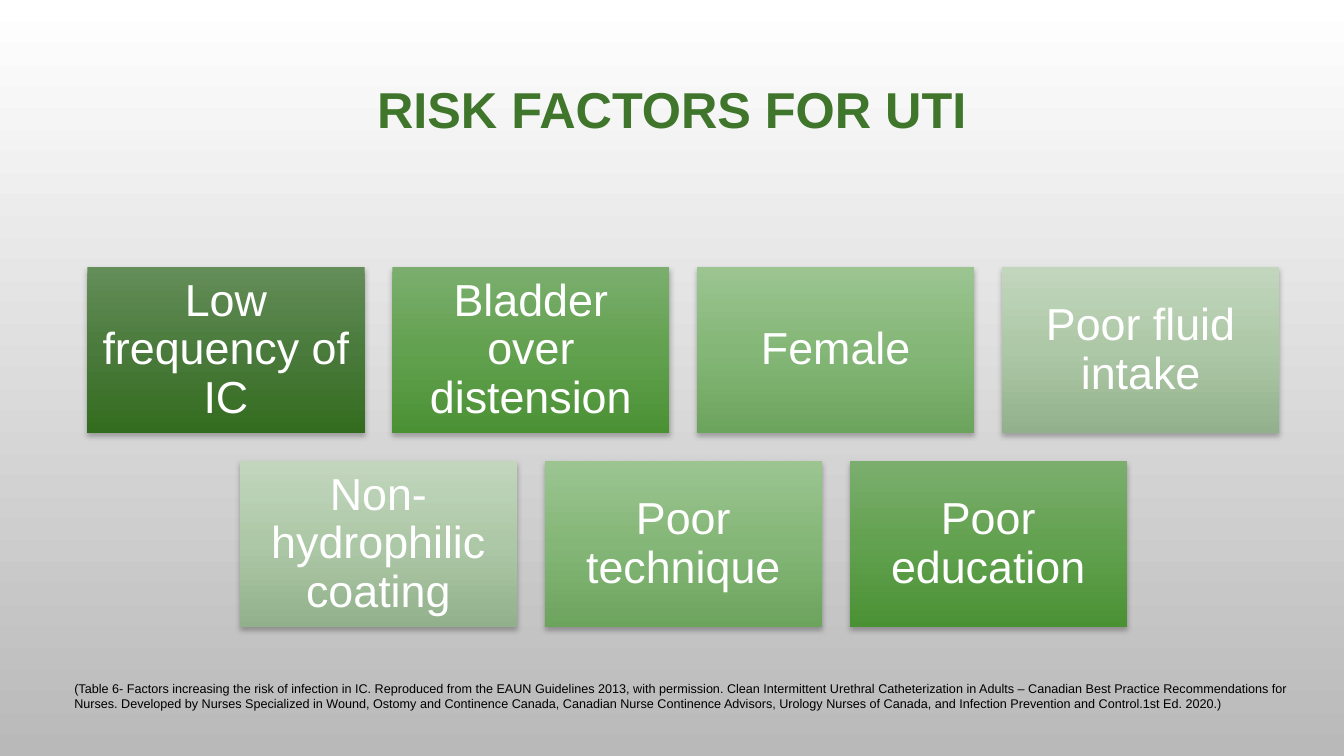
from lxml import etree
from pptx import Presentation
from pptx.dml.color import RGBColor
from pptx.enum.shapes import MSO_SHAPE
from pptx.enum.text import MSO_ANCHOR, PP_ALIGN
from pptx.oxml.ns import qn
from pptx.util import Pt

RECTANGLE = MSO_SHAPE.RECTANGLE
MIDDLE = MSO_ANCHOR.MIDDLE
CENTER, LEFT = PP_ALIGN.CENTER, PP_ALIGN.LEFT

TITLE = "RISK FACTORS FOR UTI"
SOURCE_NOTE = (
    "(Table 6- Factors increasing the risk of infection in IC. Reproduced from the EAUN "
    "Guidelines 2013, with permission. Clean Intermittent Urethral Catheterization in Adults "
    "– Canadian Best Practice Recommendations for Nurses. Developed by Nurses Specialized in "
    "Wound, Ostomy and Continence Canada, Canadian Nurse Continence Advisors, Urology Nurses "
    "of Canada, and Infection Prevention and Control.1st Ed. 2020.)"
)
BACKGROUND = ("FFFFFF", "B9B9B9")
SHADES = {
    "dark": ("648E59", "4A7A3C", "336C1E"),
    "medium": ("7BAE6E", "62A14F", "4A9134"),
    "light": ("9BC491", "84B777", "6CA35D"),
    "pale": ("C2D6BE", "ADC8A6", "92B08B"),
}
FACTOR_ROWS = [
    [("Low frequency of IC", "dark"), ("Bladder over distension", "medium"),
     ("Female", "light"), ("Poor fluid intake", "pale")],
    [("Non-hydrophilic coating", "pale"), ("Poor technique", "light"),
     ("Poor education", "medium")],
]

CARD_WIDTH, CARD_HEIGHT, GAP = 198, 118.8, 19.8
GRID_CENTER, GRID_TOP = 488.1, 190.8
CARD_INSET = 9.6


def color(value):
    return RGBColor.from_string(value)


def paint_gradient(fill, element, colors):
    fill.gradient()
    fill.gradient_angle = 270
    stops = element.find(".//" + qn("a:gsLst"))
    for stop in list(stops):
        stops.remove(stop)
    for index, value in enumerate(colors):
        position = index * 100000 // (len(colors) - 1)
        stop = etree.SubElement(stops, qn("a:gs"), pos=str(position))
        etree.SubElement(stop, qn("a:srgbClr"), val=value)


def add_shadow(shape):
    shape.shadow.inherit = False
    effects = shape.element.spPr.find(qn("a:effectLst"))
    shadow = etree.SubElement(
        effects, qn("a:outerShdw"), blurRad=str(Pt(4)), dist=str(Pt(2)),
        dir="5400000", rotWithShape="0")
    shade = etree.SubElement(shadow, qn("a:srgbClr"), val="000000")
    etree.SubElement(shade, qn("a:alpha"), val="28000")


def write_text(box, text, size, text_color, alignment, spacing=1.0, bold=False):
    frame = box.text_frame
    frame.word_wrap = True
    frame.text = text
    para = frame.paragraphs[0]
    para.alignment = alignment
    para.line_spacing = spacing
    font = para.runs[0].font
    font.name = "Arial"
    font.size = Pt(size)
    font.bold = bold
    font.color.rgb = color(text_color)
    return frame


def add_card(page, left, top, text, shade):
    card = page.shapes.add_shape(
        RECTANGLE, Pt(left), Pt(top), Pt(CARD_WIDTH), Pt(CARD_HEIGHT))
    paint_gradient(card.fill, card.element, SHADES[shade])
    card.line.fill.background()
    add_shadow(card)
    frame = write_text(card, text, 32, "FFFFFF", CENTER, 0.9)
    frame.vertical_anchor = MIDDLE
    frame.margin_left = frame.margin_right = Pt(CARD_INSET)
    frame.margin_top = frame.margin_bottom = Pt(CARD_INSET)


def main():
    deck = Presentation()
    deck.slide_width, deck.slide_height = Pt(960), Pt(540)
    page = deck.slides.add_slide(deck.slide_layouts[5])
    paint_gradient(page.background.fill, page.element, BACKGROUND)

    title = page.shapes.title
    title.left, title.top, title.width, title.height = Pt(72), Pt(49), Pt(816), Pt(62.6)
    write_text(title, TITLE, 36, "3F762B", CENTER, 0.9, True).vertical_anchor = MIDDLE

    for row, factors in enumerate(FACTOR_ROWS):
        row_width = len(factors) * (CARD_WIDTH + GAP) - GAP
        top = GRID_TOP + row * (CARD_HEIGHT + GAP)
        for column, (text, shade) in enumerate(factors):
            left = GRID_CENTER - row_width / 2 + column * (CARD_WIDTH + GAP)
            add_card(page, left, top, text, shade)

    note = page.shapes.add_textbox(Pt(46), Pt(483), Pt(881.3), Pt(28.8))
    write_text(note, SOURCE_NOTE, 9, "000000", LEFT)

    deck.save("out.pptx")


if __name__ == "__main__":
    main()
